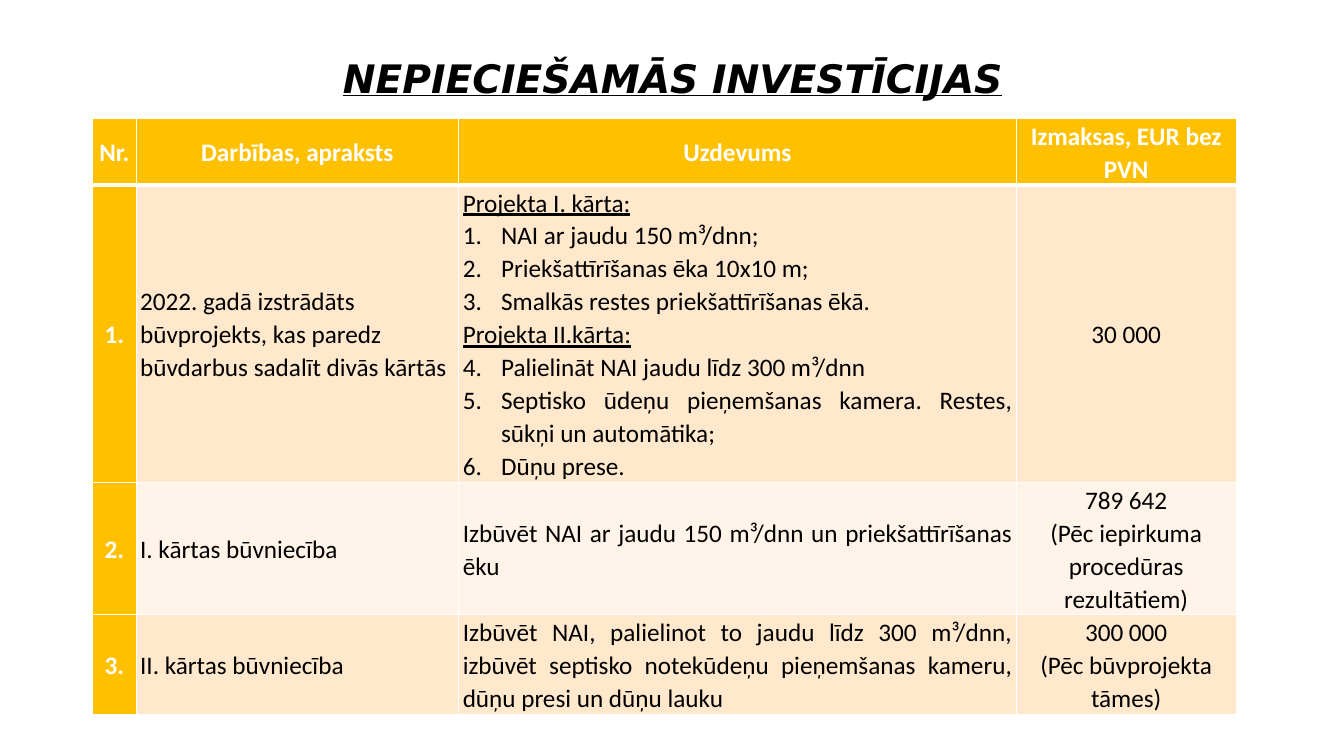
import pptx
import pptx.util
import pptx.dml.color
import pptx.enum.text
import pptx.oxml.ns
import lxml.etree

PX = 9144
FONT = "Calibri"
COLORS = {"black": "000000", "white": "FFFFFF", "gold": "FFC000",
          "peach": "FFE8CC", "cream": "FFF4E7"}
ALIGN = pptx.enum.text.PP_ALIGN
MIDDLE = pptx.enum.text.MSO_ANCHOR.MIDDLE

COLS = [43, 320, 553, 218]
ROWS = [65, 295, 131, 99]
ALIGNS = [ALIGN.CENTER, ALIGN.LEFT, ALIGN.JUSTIFY, ALIGN.CENTER]
HEADS = ["Projekta I. kārta:", "Projekta II.kārta:"]
TASKS = [
    HEADS[0],
    "NAI ar jaudu 150 m³/dnn;",
    "Priekšattīrīšanas ēka 10x10 m;",
    "Smalkās restes priekšattīrīšanas ēkā.",
    HEADS[1],
    "Palielināt NAI jaudu līdz 300 m³/dnn",
    "Septisko ūdeņu pieņemšanas kamera. Restes, sūkņi un automātika;",
    "Dūņu prese.",
]
DATA = [
    ["Nr.", "Darbības, apraksts", "Uzdevums", "Izmaksas, EUR bez PVN"],
    ["1.", "2022. gadā izstrādāts būvprojekts, kas paredz būvdarbus sadalīt divās kārtās",
     "\n".join(TASKS), "30 000"],
    ["2.", "I. kārtas būvniecība",
     "Izbūvēt NAI ar jaudu 150 m³/dnn un priekšattīrīšanas ēku",
     "789 642\n(Pēc iepirkuma procedūras rezultātiem)"],
    ["3.", "II. kārtas būvniecība",
     "Izbūvēt NAI, palielinot to jaudu līdz 300 m³/dnn, izbūvēt septisko "
     "notekūdeņu pieņemšanas kameru, dūņu presi un dūņu lauku",
     "300 000\n(Pēc būvprojekta tāmes)"],
]


def px(count):
    return pptx.util.Emu(count * PX)


def rgb(name):
    return pptx.dml.color.RGBColor.from_string(COLORS[name])


def style(para, size, font, color, bold, align, space):
    para.alignment = align
    para.line_spacing = space
    for run in para.runs:
        run.font.size = pptx.util.Pt(size)
        run.font.name = font
        run.font.bold = bold
        run.font.color.rgb = rgb(color)


def add_sub(parent, tag, **attrs):
    return lxml.etree.SubElement(parent, pptx.oxml.ns.qn(tag), attrs)


def number(para, start):
    """Make the paragraph an item of a list that counts from start."""
    props = para._p.get_or_add_pPr()
    props.set("marL", str(px(38)))
    props.set("indent", str(px(-38)))
    add_sub(props, "a:buFont", typeface="+mj-lt")
    add_sub(props, "a:buAutoNum", type="arabicPeriod", startAt=str(start))


def border(cell, row):
    """Draw white edges, with a thick one between header and body."""
    widths = {"L": 1, "R": 1, "T": 3 if row == 1 else 1, "B": 3 if row == 0 else 1}
    props = cell._tc.get_or_add_tcPr()
    for side, width in widths.items():
        line = add_sub(props, "a:ln" + side, w=str(pptx.util.Pt(width)))
        fill = add_sub(line, "a:solidFill")
        add_sub(fill, "a:srgbClr", val=COLORS["white"])


def fill_cell(cell, row, col, text):
    strong = row == 0 or col == 0
    cell.margin_left = cell.margin_right = px(4)
    cell.margin_top, cell.margin_bottom = px(1), px(0)
    cell.vertical_anchor = MIDDLE
    border(cell, row)
    cell.fill.solid()
    cell.fill.fore_color.rgb = rgb("gold" if strong else "peach" if row % 2 else "cream")
    cell.text_frame.text = text
    align = ALIGN.CENTER if row == 0 else ALIGNS[col]
    start = 1
    for index, para in enumerate(cell.text_frame.paragraphs):
        style(para, 18, FONT, "white" if strong else "black", strong, align, 1.07)
        if para.text in HEADS:
            para.runs[0].font.underline = True
            start = index + 1 if index == 0 else index
        elif text == DATA[1][2]:
            number(para, start)


def add_title(slide, left, top, width, height):
    title = slide.shapes.title
    title.left, title.top = px(left), px(top)
    title.width, title.height = px(width), px(height)
    frame = title.text_frame
    frame.text = "NEPIECIEŠAMĀS INVESTĪCIJAS"
    frame.word_wrap = True
    frame.auto_size = pptx.enum.text.MSO_AUTO_SIZE.NONE
    frame.vertical_anchor = MIDDLE
    style(frame.paragraphs[0], 28, "DejaVu Sans", "black", True, ALIGN.CENTER, 0.9)
    font = frame.paragraphs[0].runs[0].font
    font.italic = font.underline = True


def add_costs(slide, left, top):
    table = slide.shapes.add_table(len(ROWS), len(COLS), px(left), px(top),
                                   px(sum(COLS)), px(sum(ROWS))).table
    table.first_col = True
    for column, width in zip(table.columns, COLS):
        column.width = px(width)
    for row, height in enumerate(ROWS):
        table.rows[row].height = px(height)
        for col, text in enumerate(DATA[row]):
            fill_cell(table.cell(row, col), row, col, text)


def main():
    deck = pptx.Presentation()
    deck.slide_width, deck.slide_height = px(1333), px(750)
    slide = deck.slides.add_slide(deck.slide_layouts[5])
    add_title(slide, 92, 60, 1150, 41)
    add_costs(slide, 92, 117)
    deck.save("out.pptx")


if __name__ == "__main__":
    main()
